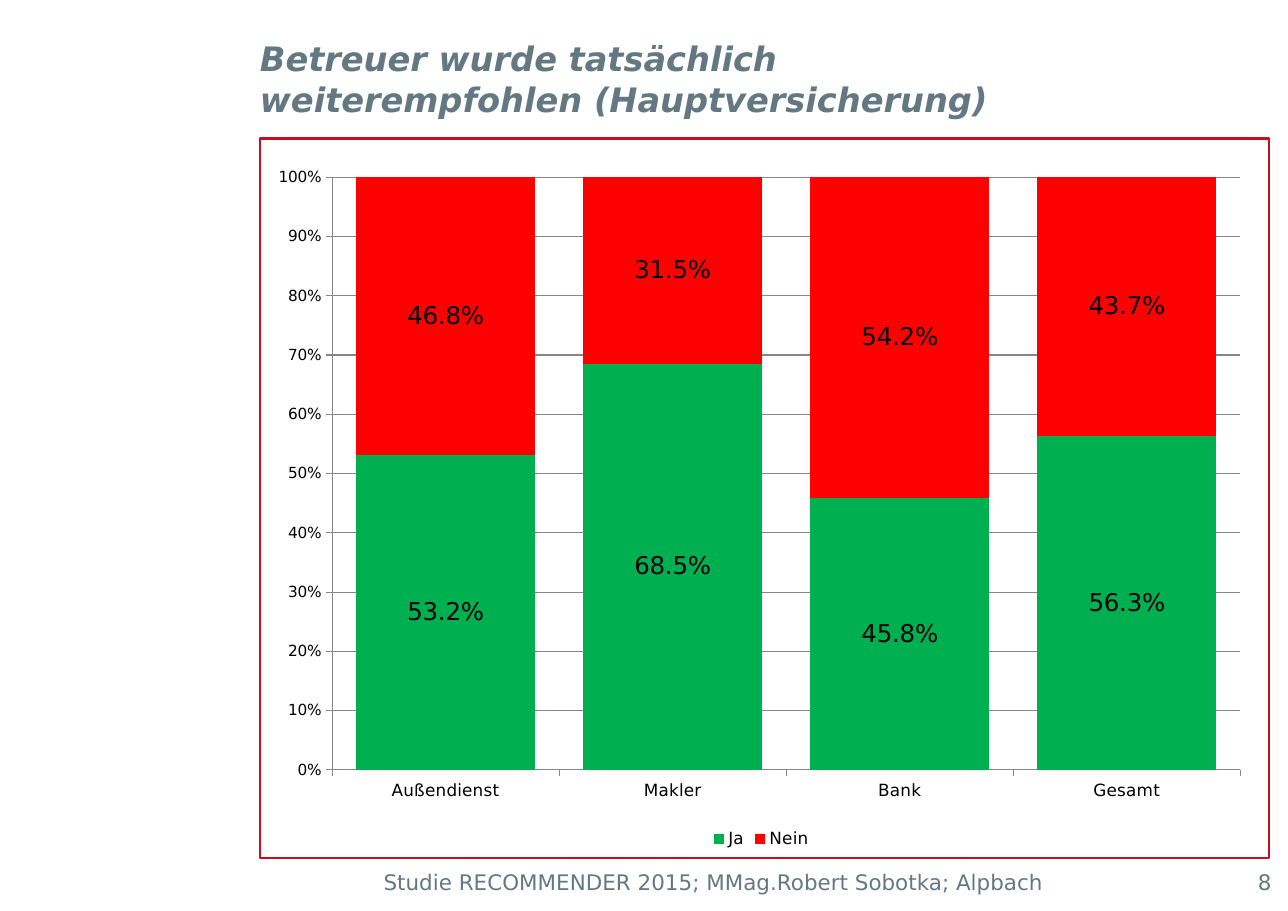
from dataclasses import dataclass

from lxml.etree import SubElement
from pptx import Presentation
from pptx.chart.data import CategoryChartData
from pptx.dml.color import RGBColor
from pptx.enum.chart import XL_CHART_TYPE, XL_LEGEND_POSITION, XL_TICK_MARK
from pptx.enum.shapes import MSO_SHAPE
from pptx.enum.text import MSO_ANCHOR, PP_ALIGN
from pptx.oxml import parse_xml
from pptx.oxml.ns import nsdecls, qn
from pptx.slide import Slide
from pptx.util import Inches, Pt

FONT = "DejaVu Sans"
SLATE = RGBColor(0x64, 0x78, 0x82)
CRIMSON = RGBColor(0xC5, 0x0E, 0x1F)
GREEN = RGBColor(0x00, 0xB0, 0x50)
RED = RGBColor(0xFF, 0x00, 0x00)
BLACK = RGBColor(0x00, 0x00, 0x00)
GREY = RGBColor(0x86, 0x86, 0x86)


@dataclass
class Label:
    text: str
    box: tuple[float, float, float, float]
    size: int = 14
    align: PP_ALIGN = PP_ALIGN.LEFT
    anchor: MSO_ANCHOR = MSO_ANCHOR.TOP
    sides: tuple[float, float] = (0.1, 0.1)
    strong: bool = False


@dataclass
class Answer:
    name: str
    shares: tuple[float, ...]
    color: RGBColor


LABELS = [
    Label("Betreuer wurde tatsächlich weiterempfohlen (Hauptversicherung)",
          (2.36, 0.35, 7.27, 0.73), size=22, anchor=MSO_ANCHOR.MIDDLE,
          sides=(0, 0.1), strong=True),
    Label("Studie RECOMMENDER 2015; MMag.Robert Sobotka; Alpbach",
          (2.38, 7.84, 8.19, 0.39), align=PP_ALIGN.CENTER),
    Label("8", (11, 7.84, 0.64, 0.39), align=PP_ALIGN.RIGHT),
]
GROUPS = ("Außendienst", "Makler", "Bank", "Gesamt")
ANSWERS = [
    Answer("Ja", (0.532, 0.685, 0.458, 0.563), GREEN),
    Answer("Nein", (0.468, 0.315, 0.542, 0.437), RED),
]
PLOT = {"x": 0.07, "y": 0.03, "w": 0.91, "h": 0.85}


def add_frame(slide: Slide) -> None:
    box = map(Inches, (2.36, 1.26, 9.16, 6.53))
    frame = slide.shapes.add_shape(MSO_SHAPE.RECTANGLE, *box)
    frame.shadow.inherit = False
    frame.fill.background()
    frame.line.color.rgb = CRIMSON
    frame.line.width = Pt(1.75)


def add_label(slide: Slide, label: Label) -> None:
    text = slide.shapes.add_textbox(*map(Inches, label.box)).text_frame
    text.word_wrap = True
    text.vertical_anchor = label.anchor
    text.margin_left, text.margin_right = map(Inches, label.sides)
    line = text.paragraphs[0]
    line.text = label.text
    line.alignment = label.align
    font = line.font
    font.name, font.size = FONT, Pt(label.size)
    font.color.rgb = SLATE
    font.bold = font.italic = label.strong


def add_bars(slide: Slide) -> None:
    data = CategoryChartData(number_format="0.0%")
    data.categories = GROUPS
    for answer in ANSWERS:
        data.add_series(answer.name, answer.shares)
    box = map(Inches, (2.38, 1.42, 9.06, 6.33))
    chart = slide.shapes.add_chart(
        XL_CHART_TYPE.COLUMN_STACKED_100, *box, data).chart
    chart.has_title = False
    chart.font.name, chart.font.size = FONT, Pt(12)
    chart.font.color.rgb = BLACK

    # Columns and their labels
    plot = chart.plots[0]
    plot.gap_width, plot.overlap = 27, 100
    plot.vary_by_categories = False
    for series, answer in zip(plot.series, ANSWERS):
        series.format.fill.solid()
        series.format.fill.fore_color.rgb = answer.color
        marks = series.data_labels
        marks.show_value = True
        marks.number_format = "0.0%"
        marks.number_format_is_linked = False
        marks.font.name, marks.font.size = FONT, Pt(16)
        marks.font.color.rgb = BLACK

    # Axes
    for axis, size in ((chart.category_axis, 11), (chart.value_axis, 10)):
        axis.major_tick_mark = XL_TICK_MARK.OUTSIDE
        axis.format.line.color.rgb = GREY
        axis.tick_labels.font.size = Pt(size)
    scale = chart.value_axis
    scale.minimum_scale, scale.maximum_scale, scale.major_unit = 0, 1, 0.1
    scale.major_gridlines.format.line.color.rgb = GREY
    scale.tick_labels.number_format = "0%"
    scale.tick_labels.number_format_is_linked = False

    # Legend
    chart.has_legend = True
    chart.legend.position = XL_LEGEND_POSITION.BOTTOM
    chart.legend.include_in_layout = False
    chart.legend.font.size = Pt(11)

    # Fixed plot area
    area = plot._element.getparent()
    for old in area.findall(qn("c:layout")):
        area.remove(old)
    layout = parse_xml(f"<c:layout {nsdecls('c')}/>")
    manual = SubElement(layout, qn("c:manualLayout"))
    modes = {"layoutTarget": "inner", "xMode": "edge", "yMode": "edge"}
    for tag, value in (modes | PLOT).items():
        SubElement(manual, qn(f"c:{tag}"), val=str(value))
    area.insert(0, layout)


def main() -> None:
    deck = Presentation()
    deck.slide_width, deck.slide_height = Inches(11.69), Inches(8.27)
    slide = deck.slides.add_slide(deck.slide_layouts[6])
    add_frame(slide)
    for label in LABELS:
        add_label(slide, label)
    add_bars(slide)
    deck.save("out.pptx")


if __name__ == "__main__":
    main()
